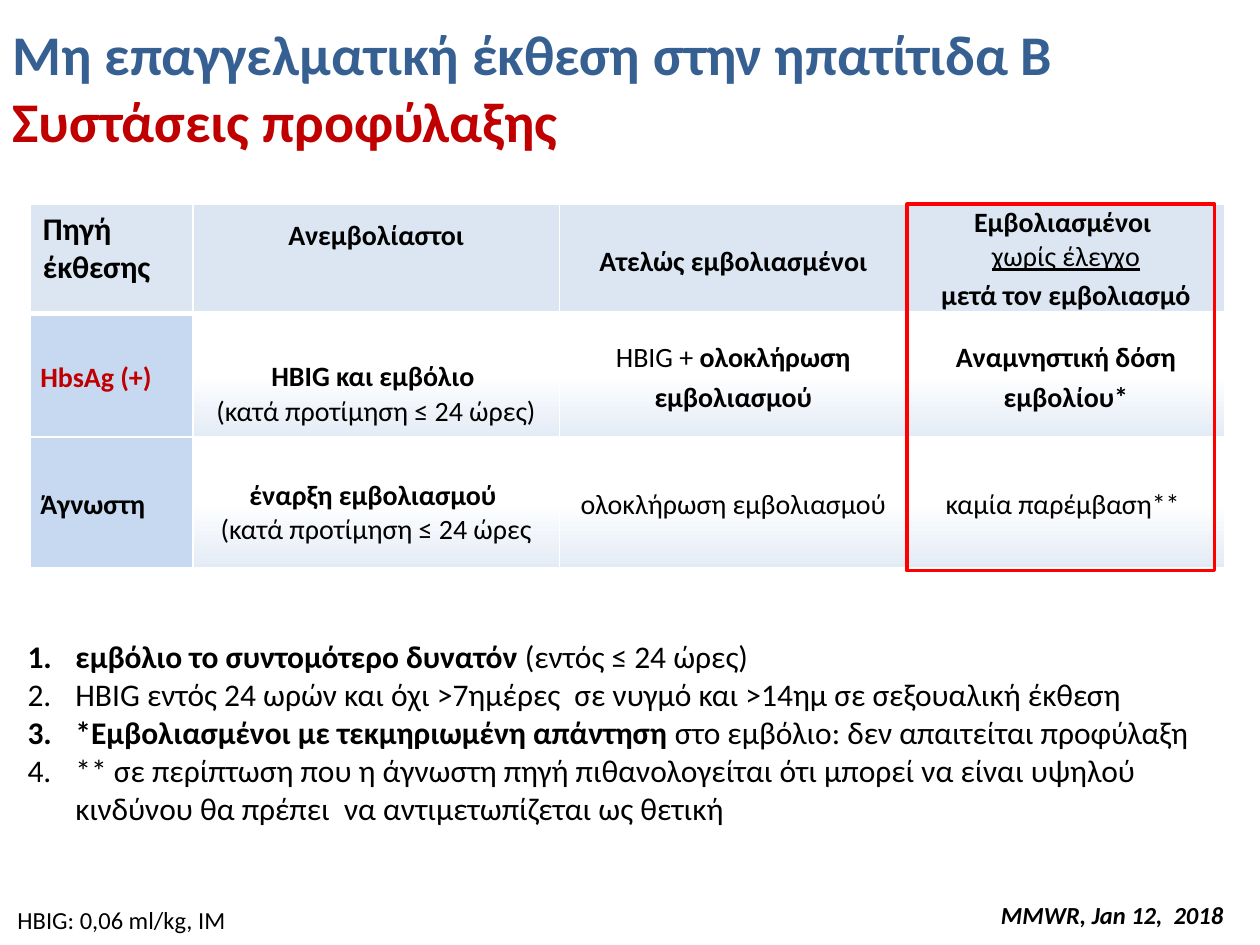
from dataclasses import dataclass

from lxml.etree import SubElement
from pptx import Presentation
from pptx.dml.color import RGBColor
from pptx.enum.shapes import MSO_SHAPE
from pptx.enum.text import MSO_ANCHOR, PP_ALIGN
from pptx.oxml.ns import qn
from pptx.util import Inches, Pt

FONT = "Calibri"
BLACK = RGBColor(0x00, 0x00, 0x00)
WHITE = RGBColor(0xFF, 0xFF, 0xFF)
TITLE_BLUE = RGBColor(0x37, 0x60, 0x92)
DARK_RED = RGBColor(0xC0, 0x00, 0x00)
FRAME_RED = RGBColor(0xFF, 0x00, 0x00)
HEADER_BLUE = RGBColor(0xDC, 0xE6, 0xF2)
SOURCE_BLUE = RGBColor(0xC6, 0xD9, 0xF1)
FADE_BLUE = RGBColor(0xE3, 0xEB, 0xF5)

CENTER, LEFT, RIGHT = PP_ALIGN.CENTER, PP_ALIGN.LEFT, PP_ALIGN.RIGHT
TABLE_LEFT, TABLE_TOP = 0.24, 1.62
COLUMN_WIDTHS = (1.29, 2.91, 2.76, 2.52)
ROW_HEIGHTS = (0.87, 0.98, 1.04)


@dataclass(frozen=True)
class Span:
    text: str
    bold: bool = False
    italic: bool = False
    underline: bool = False
    color: RGBColor = BLACK


@dataclass(frozen=True)
class Line:
    spans: tuple[Span, ...]
    spacing: float = 1.0


@dataclass(frozen=True)
class Entry:
    lines: tuple[Line, ...]
    align: PP_ALIGN = CENTER
    size: int = 16
    anchor: MSO_ANCHOR = MSO_ANCHOR.MIDDLE
    left: float = 0.03
    top: float = 0.01
    bottom: float = 0.01


def line(*spans: Span, spacing: float = 1.0) -> Line:
    return Line(spans, spacing)


def bold(text: str, color: RGBColor = BLACK) -> Span:
    return Span(text, bold=True, color=color)


ENTRIES = (
    (
        Entry((line(bold("Πηγή έκθεσης")),), LEFT, 18, MSO_ANCHOR.TOP, 0.1, 0.05, 0.05),
        Entry((line(bold("Ανεμβολίαστοι")),), bottom=0.38),
        Entry((line(bold("Ατελώς εμβολιασμένοι"), spacing=1.15),)),
        Entry((
            line(bold("Εμβολιασμένοι ")),
            line(Span("χωρίς έλεγχο", underline=True)),
            line(bold("μετά τον εμβολιασμό"), spacing=1.15),
        )),
    ),
    (
        Entry((line(bold("HbsAg (+)", DARK_RED), spacing=1.15),), LEFT, left=0.08),
        Entry((
            line(bold("HBIG και εμβόλιο ")),
            line(Span("(κατά προτίμηση ≤ 24 ώρες)")),
        ), top=0.31),
        Entry((line(Span("HBIG + "), bold("ολοκλήρωση εμβολιασμού"), spacing=1.15),)),
        Entry((line(bold("Αναμνηστική δόση εμβολίου*"), spacing=1.15),)),
    ),
    (
        Entry((line(bold("Άγνωστη"), spacing=1.15),), LEFT, left=0.08),
        Entry((
            line(bold("έναρξη εμβολιασμού ")),
            line(Span("(κατά προτίμηση ≤ 24 ώρες")),
        ), top=0.17),
        Entry((line(Span("ολοκλήρωση εμβολιασμού"), spacing=1.15),)),
        Entry((line(Span("καμία παρέμβαση** "), spacing=1.15),)),
    ),
)

NOTES = (
    line(bold("εμβόλιο το συντομότερο δυνατόν "), Span("(εντός ≤ 24 ώρες)")),
    line(Span("HBIG εντός 24 ωρών και όχι >7ημέρες  σε νυγμό και >14ημ σε σεξουαλική έκθεση")),
    line(
        bold("*Εμβολιασμένοι με τεκμηριωμένη απάντηση "),
        Span("στο εμβόλιο: δεν απαιτείται προφύλαξη"),
    ),
    line(Span(
        "** σε περίπτωση που η άγνωστη πηγή πιθανολογείται ότι μπορεί να είναι υψηλού "
        "κινδύνου θα πρέπει  να αντιμετωπίζεται ως θετική"
    )),
)


def write_lines(frame, lines: tuple[Line, ...], size: int, align: PP_ALIGN) -> None:
    for index, content in enumerate(lines):
        para = frame.paragraphs[0] if index == 0 else frame.add_paragraph()
        para.alignment = align
        para.line_spacing = content.spacing
        for span in content.spans:
            run = para.add_run()
            run.text = span.text
            run.font.name = FONT
            run.font.size = Pt(size)
            run.font.bold = span.bold
            run.font.italic = span.italic
            run.font.underline = span.underline
            run.font.color.rgb = span.color


def add_box(page, left: float, top: float, width: float, height: float):
    box = page.shapes.add_textbox(Inches(left), Inches(top), Inches(width), Inches(height))
    box.text_frame.word_wrap = True
    return box.text_frame


def add_title(page) -> None:
    frame = add_box(page, 0, 0.07, 10, 1.24)
    frame.vertical_anchor = MSO_ANCHOR.MIDDLE
    frame.text = "Μη επαγγελματική έκθεση στην ηπατίτιδα Β\vΣυστάσεις προφύλαξης"
    for run, color in zip(frame.paragraphs[0].runs, (TITLE_BLUE, DARK_RED)):
        run.font.name = FONT
        run.font.size = Pt(32)
        run.font.bold = True
        run.font.color.rgb = color


def fill_cell(cell, row: int, column: int) -> None:
    if row and column:
        cell.fill.gradient()
        cell.fill.gradient_angle = 270
        stops = zip(cell.fill.gradient_stops, (0.5, 1.0), (WHITE, FADE_BLUE))
        for stop, position, color in stops:
            stop.position = position
            stop.color.rgb = color
    else:
        cell.fill.solid()
        cell.fill.fore_color.rgb = SOURCE_BLUE if row else HEADER_BLUE


def set_borders(cell, row: int) -> None:
    properties = cell._tc.get_or_add_tcPr()
    widths = {"lnL": 1, "lnR": 1, "lnT": 3 if row == 1 else 1, "lnB": 1 if row else 3}
    for index, (side, width) in enumerate(widths.items()):
        border = SubElement(properties, qn(f"a:{side}"), w=str(Pt(width)))
        solid = SubElement(border, qn("a:solidFill"))
        SubElement(solid, qn("a:srgbClr"), val=str(WHITE))
        properties.insert(index, border)


def add_recommendations(page) -> None:
    table = page.shapes.add_table(
        len(ROW_HEIGHTS), len(COLUMN_WIDTHS), Inches(TABLE_LEFT), Inches(TABLE_TOP),
        Inches(sum(COLUMN_WIDTHS)), Inches(sum(ROW_HEIGHTS)),
    ).table
    table.first_row = False
    table.horz_banding = False
    for column, width in zip(table.columns, COLUMN_WIDTHS):
        column.width = Inches(width)
    for row, height in zip(table.rows, ROW_HEIGHTS):
        row.height = Inches(height)
    for row_index, entries in enumerate(ENTRIES):
        for column_index, entry in enumerate(entries):
            cell = table.cell(row_index, column_index)
            cell.vertical_anchor = entry.anchor
            cell.margin_left, cell.margin_right = Inches(entry.left), Inches(0.03)
            cell.margin_top, cell.margin_bottom = Inches(entry.top), Inches(entry.bottom)
            write_lines(cell.text_frame, entry.lines, entry.size, entry.align)
            fill_cell(cell, row_index, column_index)
            set_borders(cell, row_index)


def add_notes(page) -> None:
    frame = add_box(page, 0.12, 5.01, 9.88, 1.42)
    write_lines(frame, NOTES, 18, LEFT)
    for para in frame.paragraphs:
        properties = para._p.get_or_add_pPr()
        properties.set("marL", str(Inches(0.38)))
        properties.set("indent", str(Inches(-0.38)))
        SubElement(properties, qn("a:buFont"), typeface="+mj-lt")
        SubElement(properties, qn("a:buAutoNum"), type="arabicPeriod")


def add_highlight(page) -> None:
    frame = page.shapes.add_shape(
        MSO_SHAPE.RECTANGLE, Inches(7.2), Inches(TABLE_TOP), Inches(2.44), Inches(2.91)
    )
    frame.shadow.inherit = False
    frame.fill.background()
    frame.line.color.rgb = FRAME_RED
    frame.line.width = Pt(2)


def main() -> None:
    deck = Presentation()
    deck.slide_width, deck.slide_height = Inches(10), Inches(7.5)
    page = deck.slides.add_slide(deck.slide_layouts[6])
    add_title(page)
    add_recommendations(page)
    citation = line(Span("MMWR, Jan 12,  2018", bold=True, italic=True))
    write_lines(add_box(page, 6.34, 7.09, 3.47, 0.34), (citation,), 14, RIGHT)
    add_notes(page)
    dose = line(Span("HBIG: 0,06 ml/kg, IM"))
    write_lines(add_box(page, 0.04, 7.13, 2.43, 0.34), (dose,), 14, LEFT)
    add_highlight(page)
    deck.save("out.pptx")


if __name__ == "__main__":
    main()
